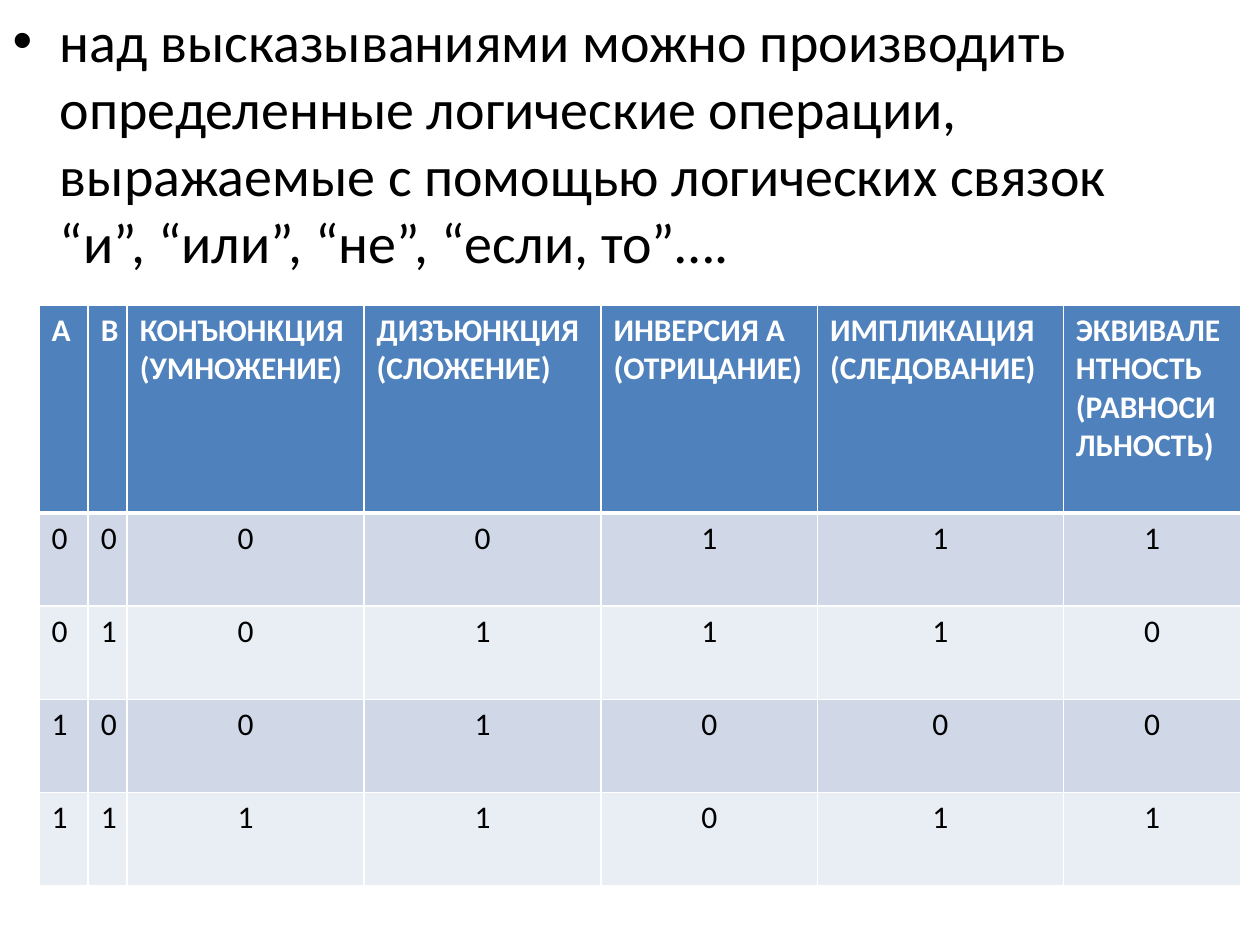
from lxml import etree
from pptx import Presentation
from pptx.dml.color import RGBColor
from pptx.enum.text import PP_ALIGN
from pptx.oxml.ns import qn
from pptx.util import Inches, Pt

LEFT, CENTER = PP_ALIGN.LEFT, PP_ALIGN.CENTER

INTRO = ("над высказываниями можно производить определенные логические операции, "
         "выражаемые с помощью логических связок “и”, “или”, “не”, “если, то”….")
HEADINGS = [
    "А",
    "В",
    "КОНЪЮНКЦИЯ\n(УМНОЖЕНИЕ)",
    "ДИЗЪЮНКЦИЯ\n(СЛОЖЕНИЕ)",
    "ИНВЕРСИЯ А\n(ОТРИЦАНИЕ)",
    "ИМПЛИКАЦИЯ\n(СЛЕДОВАНИЕ)",
    "ЭКВИВАЛЕНТНОСТЬ\n(РАВНОСИЛЬНОСТЬ)",
]
TRUTH_ROWS = ["0000111", "0101110", "1001000", "1111011"]
COL_WIDTHS = [0.39, 0.31, 1.88, 1.88, 1.72, 1.95, 1.41]
HEADER_HEIGHT, ROW_HEIGHT = 1.65, 0.74
INPUT_COLS = 2


def rgb(value):
    return RGBColor.from_string(value)


class SlideBuilder:
    font = "Calibri"
    text_color = "000000"
    light = "FFFFFF"
    header_fill = "4F81BD"
    bands = ["D0D8E8", "E9EDF4"]

    def __init__(self, slide):
        self.slide = slide

    def format_runs(self, p, size, color, bold=False):
        for r in p.runs:
            r.font.name = self.font
            r.font.size = Pt(size)
            r.font.bold = bold
            r.font.color.rgb = rgb(color)

    def bullet_body(self, text, left, top, width, height):
        sp = self.slide.placeholders[1]
        sp.left, sp.top = Inches(left), Inches(top)
        sp.width, sp.height = Inches(width), Inches(height)
        sp.text_frame.text = text
        p = sp.text_frame.paragraphs[0]
        p.space_before = Pt(0)
        self.format_runs(p, 32, self.text_color)

    def border(self, cell, side, width):
        ln = etree.SubElement(cell._tc.get_or_add_tcPr(), qn(f"a:ln{side}"),
                              w=str(Pt(width)))
        fill = etree.SubElement(ln, qn("a:solidFill"))
        etree.SubElement(fill, qn("a:srgbClr"), val=self.light)

    def cell(self, cell, text, fill, color, align, bold=False, top=1, bottom=1):
        for side, width in (("L", 1), ("R", 1), ("T", top), ("B", bottom)):
            self.border(cell, side, width)
        cell.fill.solid()
        cell.fill.fore_color.rgb = rgb(fill)
        cell.text_frame.text = text
        for p in cell.text_frame.paragraphs:
            p.alignment = align
            self.format_runs(p, 18, color, bold)

    def truth_table(self, headings, rows, left, top):
        height = HEADER_HEIGHT + ROW_HEIGHT * len(rows)
        table = self.slide.shapes.add_table(
            len(rows) + 1, len(headings), Inches(left), Inches(top),
            Inches(sum(COL_WIDTHS)), Inches(height)).table
        for column, width in zip(table.columns, COL_WIDTHS):
            column.width = Inches(width)
        for i, row in enumerate(table.rows):
            row.height = Inches(ROW_HEIGHT if i else HEADER_HEIGHT)
        for col, heading in enumerate(headings):
            self.cell(table.cell(0, col), heading, self.header_fill, self.light,
                      LEFT, bold=True, bottom=3)
        for i, values in enumerate(rows):
            for col, value in enumerate(values):
                self.cell(table.cell(i + 1, col), value, self.bands[i % 2],
                          self.text_color, LEFT if col < INPUT_COLS else CENTER,
                          top=1 if i else 3)


def main():
    prs = Presentation()
    prs.slide_width, prs.slide_height = Inches(10), Inches(7.5)
    s = prs.slides.add_slide(prs.slide_layouts[1])
    title = s.shapes.title.element
    title.getparent().remove(title)

    builder = SlideBuilder(s)
    builder.bullet_body(INTRO, 0, 0, 9.5, 7.5)
    builder.truth_table(HEADINGS, TRUTH_ROWS, 0.31, 2.42)
    prs.save("out.pptx")


if __name__ == "__main__":
    main()
